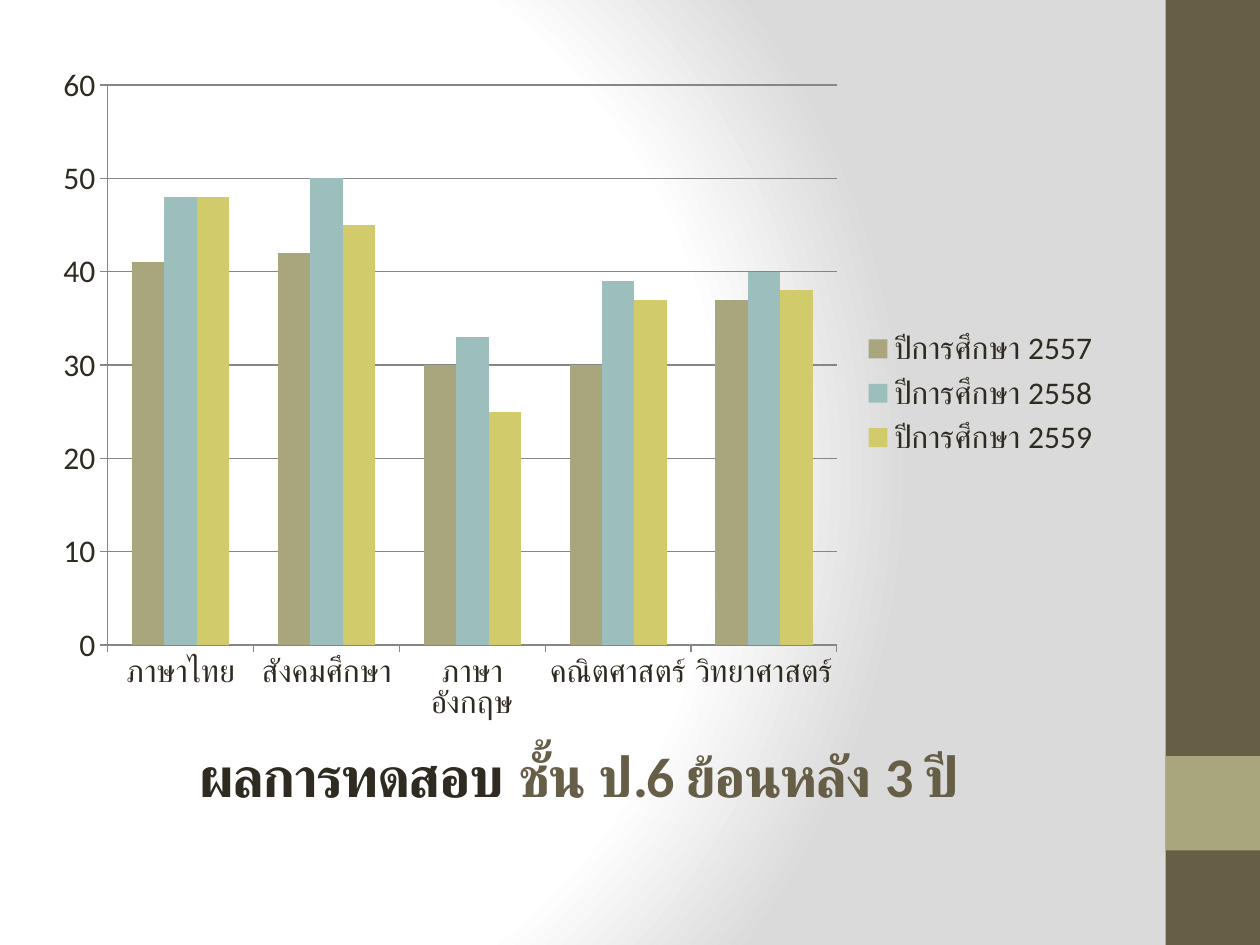
from dataclasses import dataclass
from pptx import Presentation
from pptx.chart.data import CategoryChartData as Data
from pptx.dml.color import RGBColor as RGB
from pptx.enum.chart import XL_CHART_TYPE as Kind, XL_LEGEND_POSITION as Side, XL_TICK_MARK as Tick
from pptx.enum.shapes import MSO_SHAPE as Shape
from pptx.enum.text import MSO_ANCHOR as Anchor, MSO_AUTO_SIZE as Fit, PP_ALIGN as Align
from pptx.oxml import parse_xml
from pptx.oxml.ns import nsdecls, qn
from pptx.util import Pt


@dataclass
class Theme:
    font: str = "Calibri"
    ink: str = "2F2B20"
    brown: str = "675E47"
    olive: str = "A9A57C"
    teal: str = "9CBEBD"
    gold: str = "D2CB6C"
    rule: str = "868686"
    white: str = "FFFFFF"
    grey: str = "DADADA"
    head: int = 32
    label: int = 18


def color(code):
    return RGB.from_string(code)


theme = Theme()
deck = Presentation()
deck.slide_width, deck.slide_height = Pt(720), Pt(540)
slide = deck.slides.add_slide(deck.slide_layouts[5])

slide.background.fill.solid()
stops = "".join(
    f'<a:gs pos="{spot * 1000}"><a:srgbClr val="{code}"/></a:gs>'
    for spot, code in ((0, theme.white), (75, theme.white), (100, theme.grey))
)
back = slide.element.find(".//" + qn("p:bgPr"))
back.replace(back[0], parse_xml(
    f'<a:gradFill {nsdecls("a")} rotWithShape="1"><a:gsLst>{stops}</a:gsLst>'
    '<a:path path="circle"><a:fillToRect l="20000" t="50000" r="100000" b="50000"/>'
    '</a:path></a:gradFill>'
))

for top, height, code in ((0, 540, theme.brown), (432, 54, theme.olive)):
    band = slide.shapes.add_shape(Shape.RECTANGLE, Pt(666), Pt(top), Pt(54), Pt(height))
    band.shadow.inherit = False
    band.fill.solid()
    band.fill.fore_color.rgb = color(code)
    band.line.fill.background()

data = Data()
data.categories = ["ภาษาไทย", "สังคมศึกษา", "ภาษาอังกฤษ", "คณิตศาสตร์", "วิทยาศาสตร์"]
data.add_series("ปีการศึกษา 2557", (41, 42, 30, 30, 37))
data.add_series("ปีการศึกษา 2558", (48, 50, 33, 39, 40))
data.add_series("ปีการศึกษา 2559", (48, 45, 25, 37, 38))
chart = slide.shapes.add_chart(
    Kind.COLUMN_CLUSTERED, Pt(24), Pt(30), Pt(612), Pt(389.5), data
).chart
chart.has_title = False
chart.font.name = theme.font
chart.font.size = Pt(theme.label)
chart.font.color.rgb = color(theme.ink)
chart.has_legend = True
chart.legend.position = Side.RIGHT
chart.legend.include_in_layout = False

plot = chart.plots[0]
plot.gap_width = 150
plot.overlap = 0
plot.vary_by_categories = False
for series, code in zip(plot.series, (theme.olive, theme.teal, theme.gold)):
    series.format.fill.solid()
    series.format.fill.fore_color.rgb = color(code)

scale = chart.value_axis
scale.minimum_scale, scale.maximum_scale, scale.major_unit = 0, 60, 10
scale.has_major_gridlines = True
for axis in (chart.category_axis, scale):
    axis.major_tick_mark = Tick.OUTSIDE
    axis.minor_tick_mark = Tick.NONE
for part in (chart.category_axis, scale, scale.major_gridlines):
    part.format.line.color.rgb = color(theme.rule)
    part.format.line.width = Pt(0.75)

title = slide.shapes.title
title.left, title.top, title.width, title.height = Pt(25), Pt(457), Pt(612), Pt(47)
frame = title.text_frame
frame.word_wrap = True
frame.auto_size = Fit.NONE
frame.vertical_anchor = Anchor.BOTTOM
frame.margin_top, frame.margin_bottom = Pt(0), Pt(42)
line = frame.paragraphs[0]
line.alignment = Align.CENTER
line.font.name = theme.font
line.font.size = Pt(theme.head)
line.font.bold = True
for text, code in (("ผลการทดสอบ ", theme.ink), ("ชั้น ป.6 ย้อนหลัง 3 ปี", theme.brown)):
    run = line.add_run()
    run.text = text
    run.font.color.rgb = color(code)
    run.font._element.set("spc", "-100")

deck.save("out.pptx")
